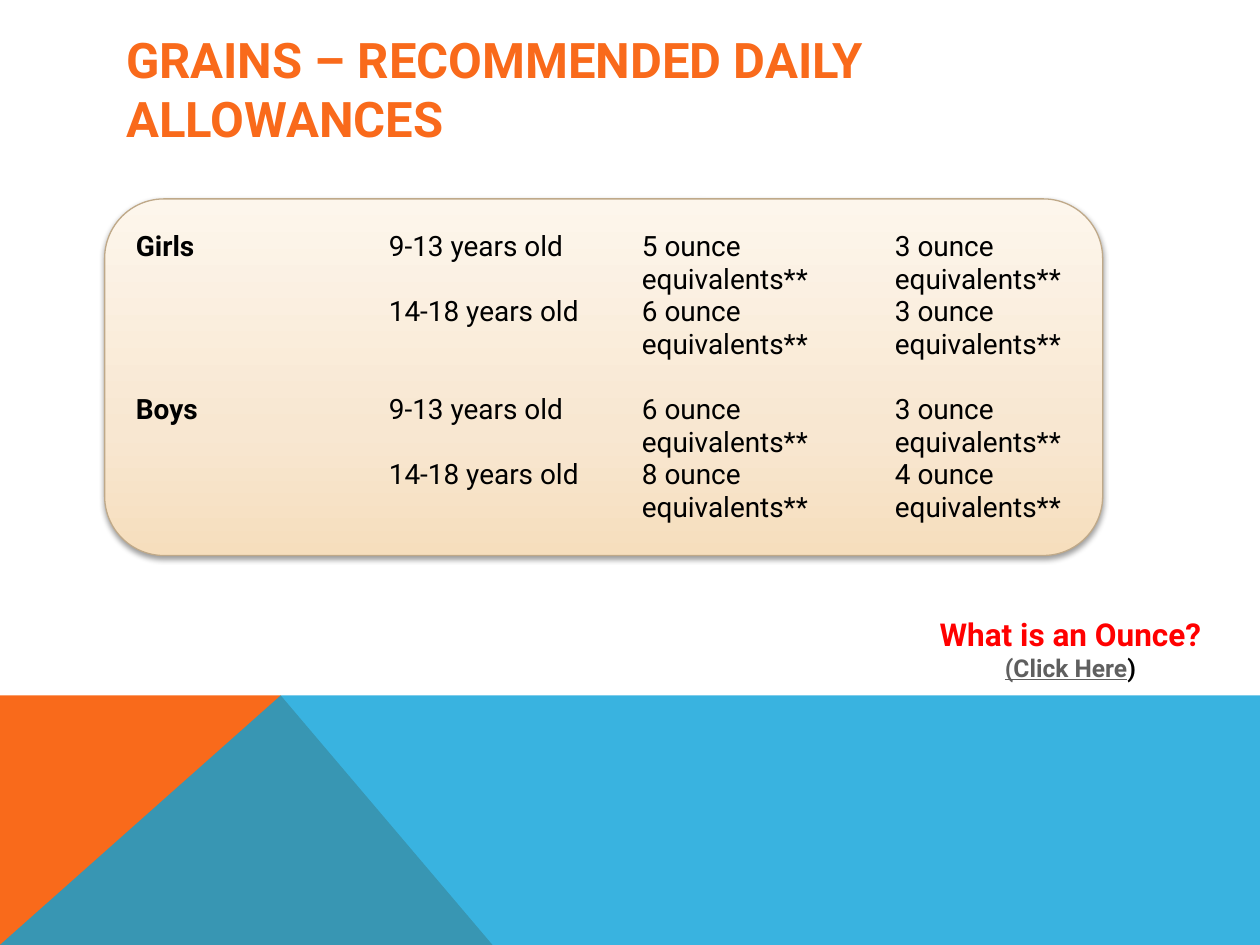
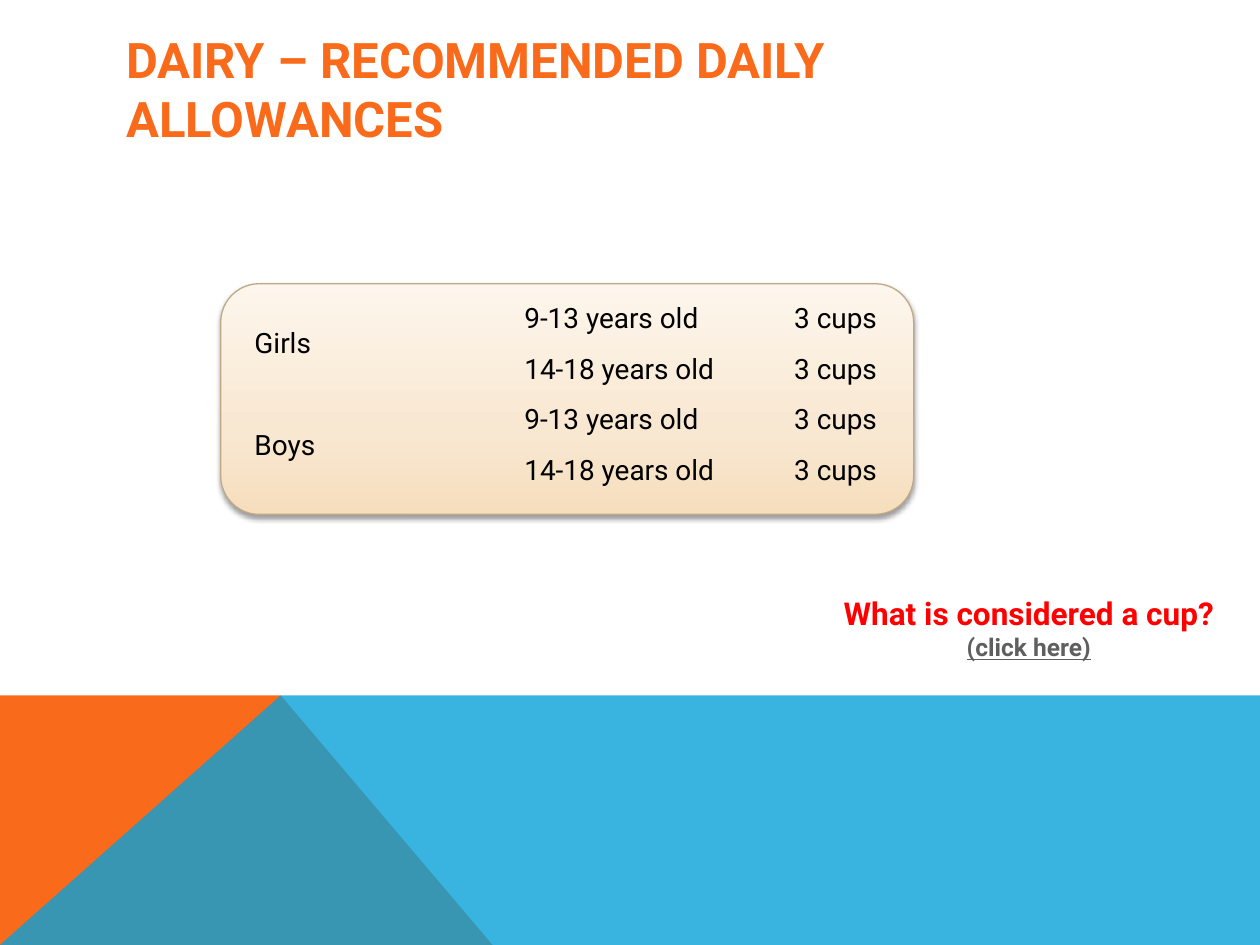
import copy

import pptx
import pptx.dml.color
import pptx.enum.shapes
import pptx.enum.text
import pptx.oxml.ns
import pptx.util
from pptx.util import Cm

FONT = "Roboto"
ORANGE, BLUE, RED, GREY, BLACK = "F96A1B", "08A1D9", "FF0000", "5F5F5F", "000000"
PANEL_STOPS = [(0, "F6DEBD"), (0.35, "F8E7D1"), (1, "FDF6EC")]
PANEL_LINE = "BFA989"
PLAIN_TABLE_STYLE = "{2D5ABB26-0587-4C30-8999-92F81FD0307C}"
WIDTH, HEIGHT, BAND_TOP, BAND_PEAK = 25.4, 19.05, 14.02, 5.66


def set_color(color_format, hex_color, alpha=None):
    """Apply a hex colour, with an optional opacity in percent."""
    color_format.rgb = pptx.dml.color.RGBColor.from_string(hex_color)
    if alpha is not None:
        color = color_format._xFill.find(pptx.oxml.ns.qn("a:srgbClr"))
        pptx.oxml.ns.qn("a:alpha")
        color.append(pptx.oxml.parse_xml(
            f'<a:alpha {pptx.oxml.ns.nsdecls("a")} val="{alpha * 1000}"/>'))


def set_font(font, size, hex_color, bold=False):
    font.name = FONT
    font.size = pptx.util.Pt(size)
    font.bold = bold
    set_color(font.color, hex_color)


presentation = pptx.Presentation()
presentation.slide_width, presentation.slide_height = Cm(WIDTH), Cm(HEIGHT)
layout = presentation.slide_layouts[5]

topics = [
    {
        "title": "GRAINS – RECOMMENDED DAILY ALLOWANCES",
        "panel": (2.11, 4.01, 20.12, 7.19),
        "table": (2.74, 4.65),
        "columns": [5, 0.1, 5, 0.1, 5, 0.1, 5],
        "rows": [1.3, 1.3, 0.66, 1.3, 1.3],
        "cells": [
            ["Girls", "", "9-13 years old", "", "5 ounce equivalents**", "", "3 ounce equivalents**"],
            ["", "", "14-18 years old", "", "6 ounce equivalents**", "", "3 ounce equivalents**"],
            [""] * 7,
            ["Boys", "", "9-13 years old", "", "6 ounce equivalents**", "", "3 ounce equivalents**"],
            ["", "", "14-18 years old", "", "8 ounce equivalents**", "", "4 ounce equivalents**"],
        ],
        "merges": [((2, 0), (2, 6))],
        "margins": (0, 0),
        "anchor": pptx.enum.text.MSO_ANCHOR.TOP,
        "bold_groups": True,
        "question_box": (18.62, 12.27, 5.92, 1.63),
        "question": "What is an Ounce?",
        "hint": [("(Click Here", GREY, True), (")", BLACK, False)],
    },
    {
        "title": "DAIRY – RECOMMENDED DAILY ALLOWANCES",
        "panel": (4.45, 5.72, 13.97, 4.65),
        "table": (4.88, 5.92),
        "columns": [5.44] * 3,
        "rows": [1.02] * 4,
        "cells": [
            ["Girls", "9-13 years old", "3 cups"],
            ["", "14-18 years old", "3 cups"],
            ["Boys", "9-13 years old", "3 cups"],
            ["", "14-18 years old", "3 cups"],
        ],
        "merges": [((0, 0), (1, 0)), ((2, 0), (3, 0))],
        "margins": (0.25, 0.13),
        "anchor": pptx.enum.text.MSO_ANCHOR.MIDDLE,
        "bold_groups": False,
        "question_box": (16.51, 11.86, 8.46, 1.63),
        "question": "What is considered a cup?",
        "hint": [("(click here)", GREY, True)],
    },
]
slides = [presentation.slides.add_slide(layout) for topic in topics]

# Bands are drawn once and moved to the shared layout
bands = [
    (ORANGE, None, [(0, BAND_TOP), (BAND_PEAK, BAND_TOP), (9.93, HEIGHT)]),
    (BLUE, 80, [(BAND_PEAK, BAND_TOP), (WIDTH, BAND_TOP), (WIDTH, HEIGHT)]),
]
for position, (color, alpha, corners) in enumerate(bands, start=2):
    builder = slides[0].shapes.build_freeform(0, Cm(HEIGHT))
    builder.add_line_segments([(Cm(x), Cm(y)) for x, y in corners], close=True)
    band = builder.convert_to_shape()
    band.shadow.inherit = False
    band.fill.solid()
    set_color(band.fill.fore_color, color, alpha) if alpha is None else None
    if alpha is not None:
        set_color(band.fill.fore_color, color)
        color_element = band.element.spPr.find(
            f'{pptx.oxml.ns.qn("a:solidFill")}/{pptx.oxml.ns.qn("a:srgbClr")}')
        color_element.append(pptx.oxml.parse_xml(
            f'<a:alpha {pptx.oxml.ns.nsdecls("a")} val="{alpha * 1000}"/>'))
    band.line.fill.background()
    layout.shapes.element.insert(position, band.element)

for slide, topic in zip(slides, topics):
    title = slide.shapes.title
    title.left, title.top, title.width, title.height = Cm(2.29), Cm(1.02), Cm(20.88), Cm(1.52)
    title.text_frame.text = topic["title"]
    title.text_frame.auto_size = pptx.enum.text.MSO_AUTO_SIZE.NONE
    title.text_frame.vertical_anchor = pptx.enum.text.MSO_ANCHOR.MIDDLE
    paragraph = title.text_frame.paragraphs[0]
    paragraph.alignment = pptx.enum.text.PP_ALIGN.LEFT
    set_font(paragraph.font, 28, ORANGE, bold=True)

    # Rounded panel behind the table
    panel = slide.shapes.add_shape(
        pptx.enum.shapes.MSO_SHAPE.ROUNDED_RECTANGLE, *map(Cm, topic["panel"]))
    panel.fill.gradient()
    panel.fill.gradient_angle = 90
    stop_list = panel.element.spPr.find(f'.//{pptx.oxml.ns.qn("a:gsLst")}')
    stop_list.insert(1, copy.deepcopy(stop_list[0]))
    for stop, (position, color) in zip(panel.fill.gradient_stops, PANEL_STOPS):
        stop.position = position
        set_color(stop.color, color)
    set_color(panel.line.color, PANEL_LINE)
    panel.line.width = pptx.util.Pt(0.75)
    panel.shadow.inherit = False
    panel.element.spPr.find(pptx.oxml.ns.qn("a:effectLst")).append(pptx.oxml.parse_xml(
        f'<a:outerShdw {pptx.oxml.ns.nsdecls("a")} blurRad="39370" dist="20320" dir="5400000"'
        ' rotWithShape="0"><a:srgbClr val="000000"><a:alpha val="38000"/></a:srgbClr>'
        '</a:outerShdw>'))

    # Allowances by group and age
    columns, rows = topic["columns"], topic["rows"]
    frame = slide.shapes.add_table(
        len(rows), len(columns), *map(Cm, topic["table"]), Cm(sum(columns)), Cm(sum(rows)))
    table = frame.table
    table.first_row = table.horz_banding = False
    table._tbl.tblPr.find(pptx.oxml.ns.qn("a:tableStyleId")).text = PLAIN_TABLE_STYLE
    for column, width in zip(table.columns, columns):
        column.width = Cm(width)
    for row, height in zip(table.rows, rows):
        row.height = Cm(height)
    side_margin, end_margin = map(Cm, topic["margins"])
    for row, texts in zip(table.rows, topic["cells"]):
        for index, (cell, text) in enumerate(zip(row.cells, texts)):
            cell.text = text
            cell.fill.background()
            cell.margin_left = cell.margin_right = side_margin
            cell.margin_top = cell.margin_bottom = end_margin
            cell.vertical_anchor = topic["anchor"]
            set_font(cell.text_frame.paragraphs[0].font, 16, BLACK,
                     bold=topic["bold_groups"] and index == 0)
    for first, last in topic["merges"]:
        table.cell(*first).merge(table.cell(*last))

    # Question with its hint line
    text_frame = slide.shapes.add_textbox(*map(Cm, topic["question_box"])).text_frame
    text_frame.word_wrap = True
    text_frame.auto_size = pptx.enum.text.MSO_AUTO_SIZE.SHAPE_TO_FIT_TEXT
    question = text_frame.paragraphs[0]
    question.text = topic["question"]
    set_font(question.font, 18, RED, bold=True)
    hint = text_frame.add_paragraph()
    for text, color, underlined in topic["hint"]:
        run = hint.add_run()
        run.text = text
        set_font(run.font, 14, color, bold=True)
        run.font.underline = underlined
    for paragraph in text_frame.paragraphs:
        paragraph.alignment = pptx.enum.text.PP_ALIGN.CENTER

presentation.save("out.pptx")
